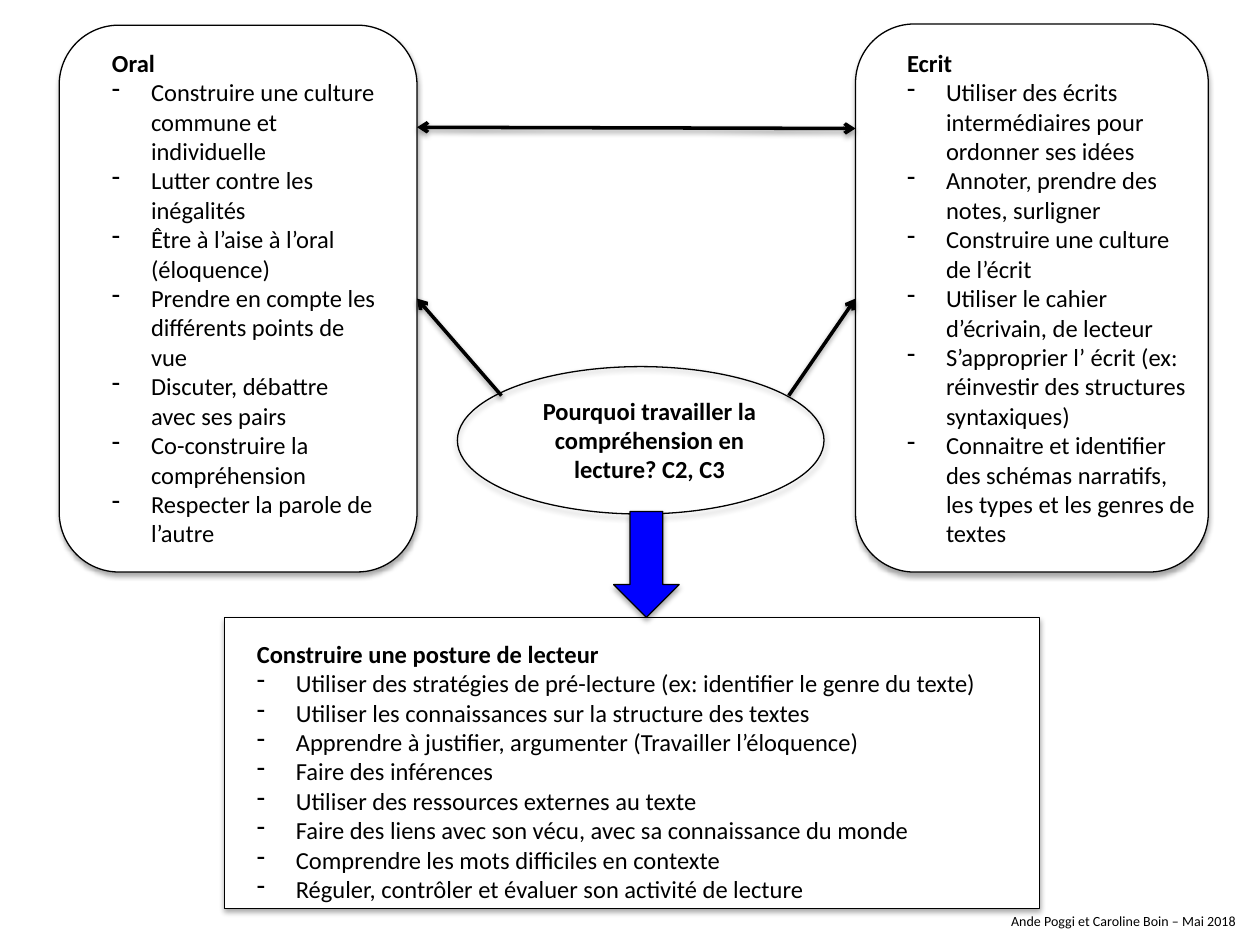
from lxml import etree
from pptx import Presentation
from pptx.dml.color import RGBColor
from pptx.enum.shapes import MSO_CONNECTOR, MSO_SHAPE
from pptx.enum.text import MSO_AUTO_SIZE, PP_ALIGN
from pptx.oxml.ns import qn
from pptx.util import Inches, Pt

OVAL, RECT = MSO_SHAPE.OVAL, MSO_SHAPE.RECTANGLE
ROUNDED, DOWN_ARROW = MSO_SHAPE.ROUNDED_RECTANGLE, MSO_SHAPE.DOWN_ARROW
STRAIGHT = MSO_CONNECTOR.STRAIGHT
LEFT, CENTER, RIGHT = PP_ALIGN.LEFT, PP_ALIGN.CENTER, PP_ALIGN.RIGHT
GROW = MSO_AUTO_SIZE.SHAPE_TO_FIT_TEXT

COLORS = {"ink": "000000", "paper": "FFFFFF", "arrow": "0000FF"}
INDENT = Inches(0.31)

prs = Presentation()
prs.slide_width, prs.slide_height = Inches(10), Inches(7.5)
s = prs.slides.add_slide(prs.slide_layouts[6])


def outline(sp, width, opacity, distance):
    """Give a shape or connector its black line and soft shadow below."""
    sp.line.color.rgb = RGBColor.from_string(COLORS["ink"])
    sp.line.width = Pt(width)
    effects = etree.SubElement(sp._element.spPr, qn("a:effectLst"))
    shadow = etree.SubElement(effects, qn("a:outerShdw"), blurRad=str(Pt(3.1)),
                              dist=str(Pt(distance)), dir=str(90 * 60000), rotWithShape="0")
    color = etree.SubElement(shadow, qn("a:srgbClr"), val=COLORS["ink"])
    etree.SubElement(color, qn("a:alpha"), val=str(opacity * 1000))


def add_text(box, heading, items=(), size=14, bold=True, align=LEFT):
    """Add a text box with a heading and dashed items below it."""
    tf = s.shapes.add_textbox(*map(Inches, box)).text_frame
    tf.word_wrap, tf.auto_size = True, GROW
    for i, text in enumerate([heading, *items]):
        p = tf.paragraphs[0] if i == 0 else tf.add_paragraph()
        p.alignment = align
        if i:
            pPr = p._p.get_or_add_pPr()
            pPr.set("marL", str(INDENT))
            pPr.set("indent", str(-INDENT))
            etree.SubElement(pPr, qn("a:buChar"), char="-")
        r = p.add_run()
        r.text = text
        style = {"name": "Calibri", "size": Pt(size), "bold": bold and i == 0}
        for name, value in style.items():
            setattr(r.font, name, value)
        r.font.color.rgb = RGBColor.from_string(COLORS["ink"])


panels = [
    (OVAL, (3.63, 2.91, 2.91, 1.17), None),
    (RECT, (1.78, 4.9, 6.47, 2.31), "paper"),
    (ROUNDED, (0.47, 0.2, 2.84, 4.34), "paper"),
    (ROUNDED, (6.79, 0.19, 2.8, 4.35), "paper"),
    (DOWN_ARROW, (4.87, 4.06, 0.52, 0.84), "arrow"),
]
for kind, box, fill in panels:
    sp = s.shapes.add_shape(kind, *map(Inches, box))
    if fill:
        sp.fill.solid()
        sp.fill.fore_color.rgb = RGBColor.from_string(COLORS[fill])
    else:
        sp.fill.background()
    outline(sp, 0.75, 35, 1.8)

links = [
    ((3.98, 3.14, 3.31, 2.37), ["tailEnd"]),
    ((6.26, 3.14, 6.79, 2.37), ["tailEnd"]),
    ((3.31, 1.01, 6.79, 1.02), ["headEnd", "tailEnd"]),
]
for ends, arrowheads in links:
    link = s.shapes.add_connector(STRAIGHT, *map(Inches, ends))
    outline(link, 2, 38, 1.6)
    for end in arrowheads:
        etree.SubElement(link.line._get_or_add_ln(), qn(f"a:{end}"), type="arrow")

add_text((4.1, 3.09, 2.11, 0.81),
         "Pourquoi travailler la compréhension en lecture? C2, C3", align=CENTER)
add_text((1.94, 5.02, 6.17, 2.22), "Construire une posture de lecteur", [
    "Utiliser des stratégies de pré-lecture (ex: identifier le genre du texte)",
    "Utiliser les connaissances sur la structure des textes",
    "Apprendre à justifier, argumenter (Travailler l’éloquence)",
    "Faire des inférences",
    "Utiliser des ressources externes au texte",
    "Faire des liens avec son vécu, avec sa connaissance du monde",
    "Comprendre les mots difficiles en contexte",
    "Réguler, contrôler et évaluer son activité de lecture",
])
add_text((0.79, 0.33, 2.29, 4.34), "Oral", [
    "Construire une culture commune et individuelle",
    "Lutter contre les inégalités",
    "Être à l’aise à l’oral (éloquence)",
    "Prendre en compte les différents points de vue",
    "Discuter, débattre avec ses pairs",
    "Co-construire la compréhension",
    "Respecter la parole de l’autre",
])
add_text((7.1, 0.33, 2.49, 4.11), "Ecrit", [
    "Utiliser des écrits intermédiaires pour ordonner ses idées",
    "Annoter, prendre des notes, surligner",
    "Construire une culture de l’écrit",
    "Utiliser le cahier d’écrivain, de lecteur",
    "S’approprier l’ écrit (ex: réinvestir des structures syntaxiques)",
    "Connaitre et identifier des schémas narratifs, les types et les genres de textes",
])
add_text((6.79, 7.19, 3.12, 0.24), "Ande Poggi et Caroline Boin – Mai 2018",
         size=8, bold=False, align=RIGHT)

prs.save("out.pptx")
